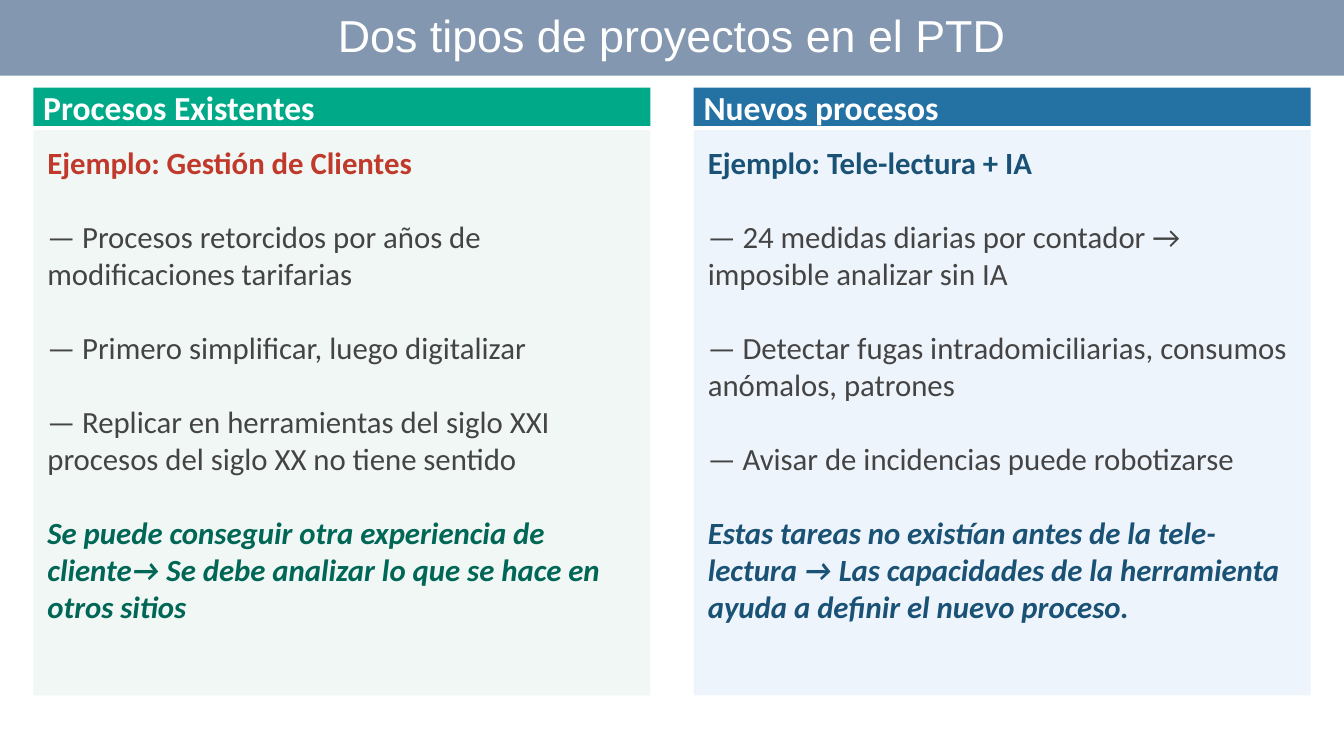
from pptx import Presentation
from pptx.dml.color import RGBColor
from pptx.enum.shapes import MSO_SHAPE
from pptx.enum.text import MSO_ANCHOR, PP_ALIGN
from pptx.util import Inches, Pt

RECTANGLE = MSO_SHAPE.RECTANGLE
TOP, MIDDLE = MSO_ANCHOR.TOP, MSO_ANCHOR.MIDDLE
LEFT, CENTER = PP_ALIGN.LEFT, PP_ALIGN.CENTER
BODY_SIZE = 22
BLANK_LINE = 26.4


def add_box(left, top, width, height, fill, anchor=MIDDLE):
    shape = slide.shapes.add_shape(
        RECTANGLE, Inches(left), Inches(top), Inches(width), Inches(height))
    shape.shadow.inherit = False
    shape.fill.solid()
    shape.fill.fore_color.rgb = RGBColor.from_string(fill)
    shape.line.fill.background()
    shape.text_frame.word_wrap = True
    shape.text_frame.vertical_anchor = anchor
    return shape.text_frame


def write(frame, text, size=BODY_SIZE, color="FFFFFF", font="Calibri",
          bold=False, italic=False, align=LEFT, line_spacing=None):
    paragraph = frame.paragraphs[0]
    if paragraph.runs:
        paragraph = frame.add_paragraph()
        paragraph.space_before = Pt(BLANK_LINE)
    paragraph.alignment = align
    paragraph.line_spacing = line_spacing
    run = paragraph.add_run()
    run.text = text
    run.font.name = font
    run.font.size = Pt(size)
    run.font.bold = bold
    run.font.italic = italic
    run.font.color.rgb = RGBColor.from_string(color)


presentation = Presentation()
presentation.slide_width = Inches(13.33)
presentation.slide_height = Inches(7.5)
slide = presentation.slides.add_slide(presentation.slide_layouts[6])

title = add_box(0, 0, 13.33, 0.75, "8497B0")
write(title, "Dos tipos de proyectos en el PTD", size=32, font="Arial",
      align=CENTER, line_spacing=0.9)

columns = [
    {
        "left": 0.33,
        "heading": "Procesos Existentes",
        "heading_fill": "00AA88",
        "body_fill": "F0F7F5",
        "example": "Ejemplo: Gestión de Clientes",
        "example_color": "C0392B",
        "points": [
            "— Procesos retorcidos por años de modificaciones tarifarias",
            "— Primero simplificar, luego digitalizar",
            "— Replicar en herramientas del siglo XXI procesos del siglo XX no tiene sentido",
        ],
        "conclusion": "Se puede conseguir otra experiencia de cliente→ "
                      "Se debe analizar lo que se hace en otros sitios",
        "conclusion_color": "006655",
    },
    {
        "left": 6.88,
        "heading": "Nuevos procesos",
        "heading_fill": "2471A3",
        "body_fill": "EEF4FB",
        "example": "Ejemplo: Tele-lectura + IA",
        "example_color": "1A5276",
        "points": [
            "— 24 medidas diarias por contador → imposible analizar sin IA",
            "— Detectar fugas intradomiciliarias, consumos anómalos, patrones",
            "— Avisar de incidencias puede robotizarse",
        ],
        "conclusion": "Estas tareas no existían antes de la tele-lectura → "
                      "Las capacidades de la herramienta ayuda a definir el nuevo proceso.",
        "conclusion_color": "1A5276",
    },
]

for column in columns:
    heading = add_box(column["left"], 0.87, 6.12, 0.38, column["heading_fill"])
    write(heading, column["heading"], size=24, bold=True)

    body = add_box(column["left"], 1.29, 6.12, 5.61, column["body_fill"], anchor=TOP)
    body.margin_left = body.margin_right = Inches(0.14)
    body.margin_top = body.margin_bottom = Inches(0.14)
    write(body, column["example"], color=column["example_color"], bold=True)
    for point in column["points"]:
        write(body, point, color="444444")
    write(body, column["conclusion"], color=column["conclusion_color"],
          bold=True, italic=True)

presentation.save("out.pptx")
